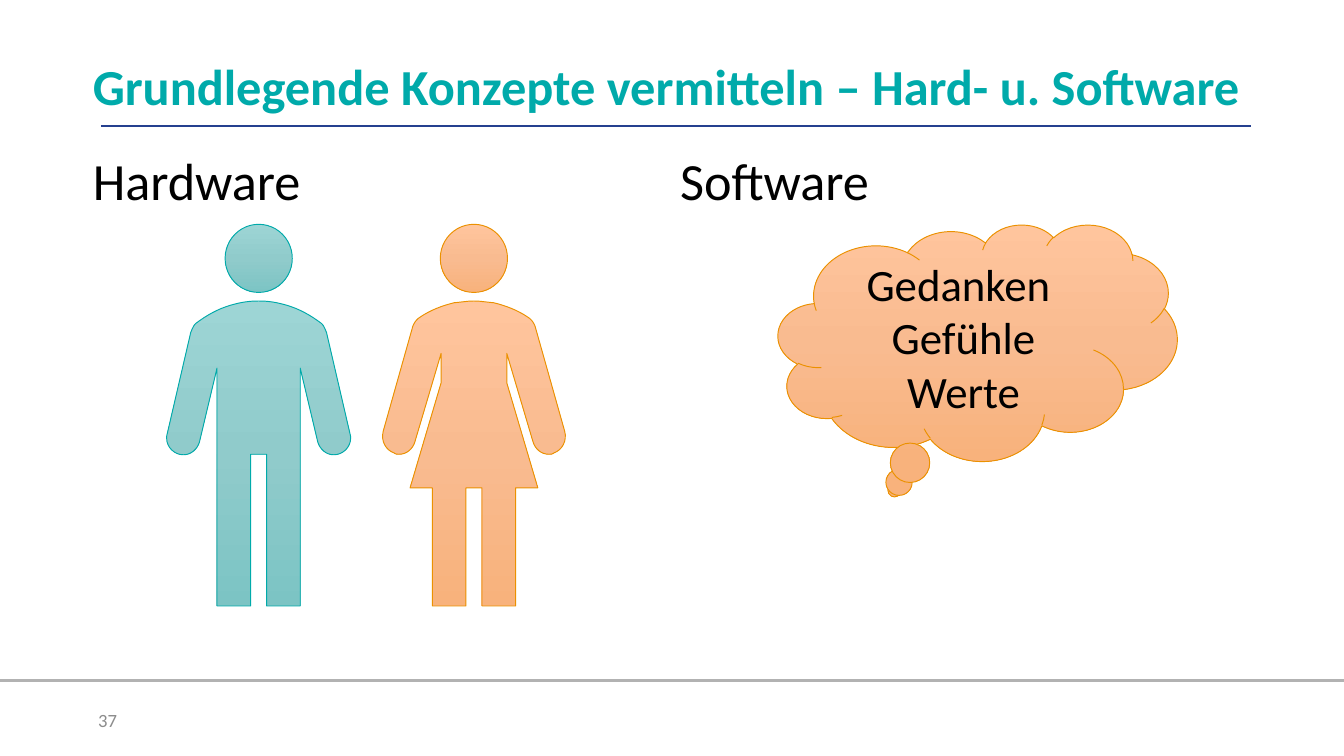
from copy import deepcopy
from lxml import etree
from pptx import Presentation
from pptx import util as u
from pptx.dml.color import RGBColor
from pptx.enum import shapes, text
from pptx.oxml.ns import qn

TEAL = ("9DD5D5", "90CBCB", "7CC4C4"), "00AAAA"
PEACH = ("FFC59D", "F9BB90", "F8B27C"), "EB9100"
TOP = 161.3

MAN = [
    (0, 0),
    (5, 0, 9.7, 0.7, 14.8, 2.2),
    (22, 4.3, 27.7, 7.6, 33.5, 11.9),
    (34.9, 13, 35.6, 15.1, 36.4, 16.9),
    (49, 71.3),
    (49, 71.3, 49.3, 72, 49.3, 73.4),
    (49.3, 78.5, 45, 82.4, 40.3, 82.4),
    (36, 82.4, 32.8, 79.2, 31.7, 75.6),
    (22.3, 36), (22.3, 163.4), (4.3, 163.4), (4.3, 82.1),
]
WOMAN = [
    (0, 0),
    (3.6, 0, 7.2, 0.7, 10.4, 0.9),
    (17.3, 2.5, 23.4, 5, 28.8, 8.6),
    (30.6, 9.7, 32, 11.5, 32.8, 13.7),
    (48.6, 69.8),
    (50, 74.9, 47.2, 79.9, 42.8, 81.4),
    (42.1, 82.1, 41, 82.1, 40, 82.1),
    (36, 82.1, 32.8, 79.2, 31.7, 75.6),
    (17.6, 28.1), (17.6, 43.9), (34.2, 100.1), (22.3, 100.1),
    (22.3, 163.4), (4.3, 163.4), (4.3, 100.1),
]


def color(code):
    return RGBColor.from_string(code)


def place(shape, left, top, width, height):
    shape.left, shape.top = u.Pt(left), u.Pt(top)
    shape.width, shape.height = u.Pt(width), u.Pt(height)


def paint(shape, look):
    tones, edge = look
    shape.shadow.inherit = False
    shape.fill.gradient()
    shape.fill.gradient_angle = 270
    stops = shape.element.spPr.find(".//" + qn("a:gsLst"))
    stops.insert(1, deepcopy(stops[0]))
    for stop, tone, pos in zip(shape.fill.gradient_stops, tones, (0, 0.5, 1)):
        stop.color.rgb = color(tone)
        stop.position = pos
    shape.line.color.rgb = color(edge)
    shape.line.width = u.Pt(0.5)


def trace(half, steps=8):
    dots = []
    for part in half:
        if len(part) == 2:
            dots.append(part)
            continue
        ax, ay = dots[-1]
        bx, by, cx, cy, dx, dy = part
        for i in range(1, steps + 1):
            t = i / steps
            s = 1 - t
            k = s**3, 3 * s * s * t, 3 * s * t * t, t**3
            dots.append((
                sum(w * x for w, x in zip(k, (ax, bx, cx, dx))),
                sum(w * y for w, y in zip(k, (ay, by, cy, dy))),
            ))
    return dots + [(-x, y) for x, y in reversed(dots[1:])]


def figure(slide, mid, half, look):
    group = slide.shapes.add_group_shape()
    head = group.shapes.add_shape(
        shapes.MSO_SHAPE.OVAL, u.Pt(mid - 18), u.Pt(120.2), u.Pt(36), u.Pt(36.5))
    dots = [(u.Pt(mid + x), u.Pt(TOP + y)) for x, y in trace(half)]
    pen = group.shapes.build_freeform(*dots[0])
    pen.add_line_segments(dots[1:], close=True)
    body = pen.convert_to_shape()
    for shape in (head, body):
        paint(shape, look)


def rule(slide, left, right, y, tone):
    line = slide.shapes.add_connector(
        shapes.MSO_CONNECTOR.STRAIGHT, u.Pt(left), u.Pt(y), u.Pt(right), u.Pt(y))
    line.line.color.rgb = color(tone)
    line.line.width = u.Pt(1.5)
    etree.SubElement(line.element.spPr, qn("a:effectLst"))


def write(para, words, size, tone, bold=False, align=text.PP_ALIGN.LEFT):
    para.alignment = align
    para.space_before = u.Pt(0)
    run = para.add_run()
    run.text = words
    font = run.font
    font.name, font.size, font.bold = "Calibri", u.Pt(size), bold
    font.color.rgb = color(tone)


def frame(shape, anchor):
    box = shape.text_frame
    box.margin_left = box.margin_right = box.margin_top = box.margin_bottom = 0
    box.word_wrap = True
    box.auto_size = text.MSO_AUTO_SIZE.NONE
    box.vertical_anchor = anchor
    return box.paragraphs[0]


def title(slide, words):
    shape = slide.shapes.title
    place(shape, 49.7, 31, 620.6, 33.1)
    para = frame(shape, text.MSO_ANCHOR.MIDDLE)
    para.line_spacing = 0.9
    write(para, words, 27, "00AAAA", True)


def column(shape, left, words):
    place(shape, left, 79.2, 306, 268.6)
    para = frame(shape, text.MSO_ANCHOR.TOP)
    props = para._p.get_or_add_pPr()
    props.set("marL", "0")
    props.set("indent", "0")
    etree.SubElement(props, qn("a:buNone"))
    para.space_after = u.Pt(6)
    write(para, words, 28, "000000")


def cloud(slide, lines):
    shape = slide.shapes.add_shape(
        shapes.MSO_SHAPE.CLOUD_CALLOUT, u.Pt(416.9), u.Pt(120.2), u.Pt(213.8), u.Pt(126.7))
    paint(shape, PEACH)
    box = shape.text_frame
    box.word_wrap = True
    box.vertical_anchor = text.MSO_ANCHOR.MIDDLE
    for i, words in enumerate(lines):
        para = box.add_paragraph() if i else box.paragraphs[0]
        write(para, words, 24, "000000", align=text.PP_ALIGN.CENTER)


def number(slide, words):
    shape = slide.shapes.add_textbox(u.Pt(52.6), u.Pt(375.1), u.Pt(162), u.Pt(21.6))
    write(frame(shape, text.MSO_ANCHOR.MIDDLE), words, 10, "8C8C8C")


def main():
    deck = Presentation()
    deck.slide_width, deck.slide_height = u.Pt(720), u.Pt(405)
    slide = deck.slides.add_slide(deck.slide_layouts[3])
    rule(slide, 54, 670.3, 67.5, "25408F")
    rule(slide, 0, 720, 364.5, "B2B2B2")
    title(slide, "Grundlegende Konzepte vermitteln – Hard- u. Software")
    column(slide.placeholders[1], 49.7, "Hardware")
    column(slide.placeholders[2], 364.3, "Software")
    figure(slide, 138.6, MAN, TEAL)
    figure(slide, 253.9, WOMAN, PEACH)
    cloud(slide, ("Gedanken ", "Gefühle", "Werte"))
    number(slide, "37")
    deck.save("out.pptx")


if __name__ == "__main__":
    main()
